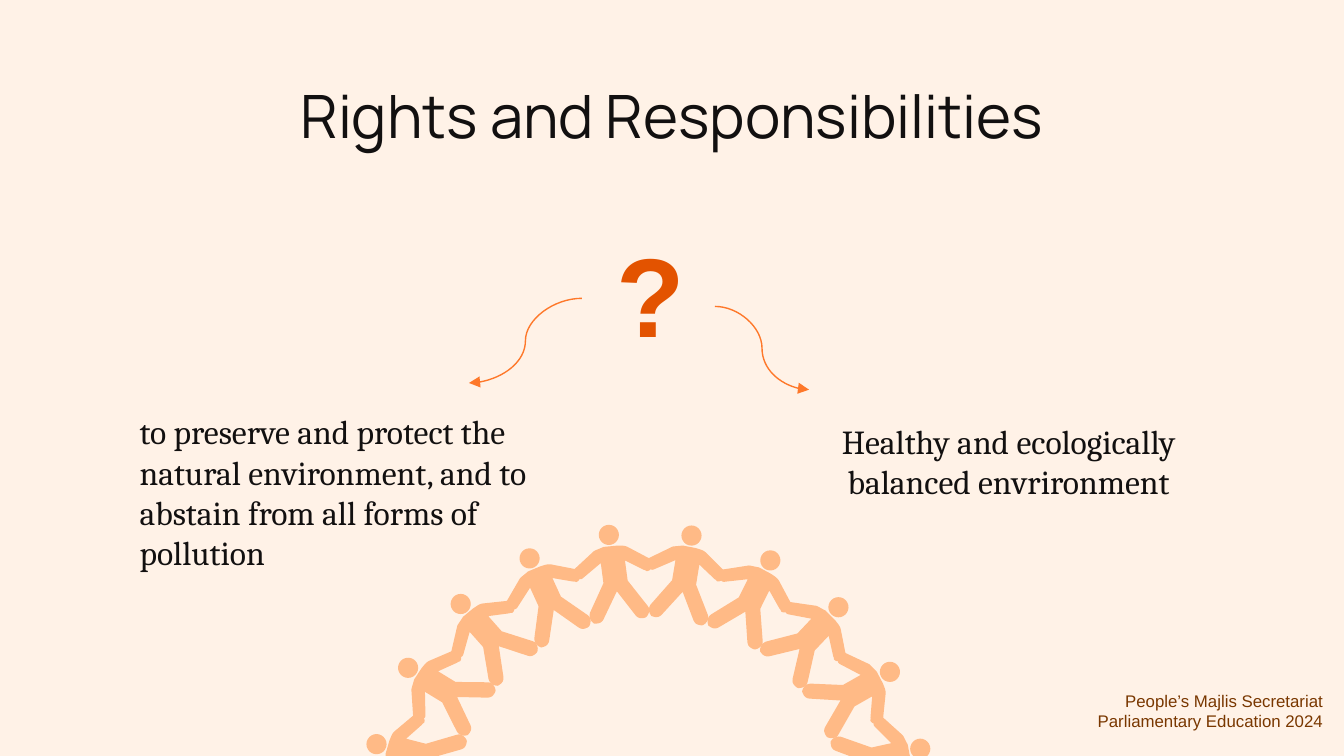
from math import cos, radians, sin

from lxml.etree import SubElement
from pptx import Presentation
from pptx.dml.color import RGBColor as Rgb
from pptx.enum.shapes import MSO_CONNECTOR as Link, MSO_SHAPE as Kind
from pptx.enum.text import MSO_ANCHOR as Anchor, PP_ALIGN as Align
from pptx.oxml.ns import qn
from pptx.util import Inches, Pt

HUES = {"paper": "FFF2E7", "ink": "121010", "brown": "793700",
        "mark": "E35300", "arrow": "FE782A", "people": "FFBA86"}
WIDTH = 10
HEIGHT = WIDTH * 9 / 16
HUB = (4.82, 6.04)
STEP = 17
COUNT = 10
BASE = 4
HEAD = (4.53, 3.98)
SIZE = 0.15
BODY = [
    (4.61, 4.06), (4.6, 4.06, 4.6, 4.06, 4.59, 4.06), (4.49, 4.07),
    (4.47, 4.08, 4.44, 4.09, 4.42, 4.1), (4.28, 4.23),
    (4.26, 4.24, 4.26, 4.27, 4.28, 4.29),
    (4.29, 4.3, 4.3, 4.31, 4.32, 4.31),
    (4.33, 4.31, 4.34, 4.3, 4.34, 4.3),
    (4.47, 4.19), (4.49, 4.34), (4.39, 4.56),
    (4.38, 4.59, 4.39, 4.62, 4.42, 4.64),
    (4.43, 4.64, 4.43, 4.64, 4.44, 4.64),
    (4.46, 4.64, 4.48, 4.63, 4.49, 4.61),
    (4.59, 4.4), (4.73, 4.58),
    (4.74, 4.59, 4.75, 4.6, 4.77, 4.6),
    (4.78, 4.6, 4.8, 4.6, 4.81, 4.59),
    (4.83, 4.57, 4.84, 4.53, 4.82, 4.51),
    (4.67, 4.32), (4.65, 4.17), (4.79, 4.24),
    (4.8, 4.24, 4.81, 4.25, 4.81, 4.25),
    (4.83, 4.25, 4.84, 4.24, 4.85, 4.22), (4.86, 4.21),
    (4.87, 4.19, 4.86, 4.17, 4.84, 4.16), (4.67, 4.07),
    (4.65, 4.06, 4.63, 4.06, 4.61, 4.06),
]


def trace(path, steps=5):
    """Turn lines and cubic curves into a list of points."""
    dots = []
    for seg in path:
        if len(seg) == 2:
            dots.append(seg)
            continue
        ends = [dots[-1], seg[:2], seg[2:4], seg[4:]]
        for n in range(1, steps + 1):
            t = n / steps
            mix = ((1 - t) ** 3, 3 * t * (1 - t) ** 2, 3 * t * t * (1 - t), t ** 3)
            dots.append(tuple(sum(m * p[k] for m, p in zip(mix, ends)) for k in (0, 1)))
    return dots


def turn(dot, angle):
    """Rotate a point about the hub by an angle in degrees."""
    x, y = dot[0] - HUB[0], dot[1] - HUB[1]
    c, s = cos(radians(angle)), sin(radians(angle))
    return HUB[0] + x * c - y * s, HUB[1] + x * s + y * c


class Deck:
    """Hold the style and the current slide."""

    def __init__(self, width, height):
        """Open a deck with one plain slide."""
        self.prs = Presentation()
        self.prs.slide_width, self.prs.slide_height = Inches(width), Inches(height)
        self.slide = self.prs.slides.add_slide(self.prs.slide_layouts[6])
        self.paint(self.slide.background.fill, "paper")

    def paint(self, fill, hue):
        """Give a fill one solid colour."""
        fill.solid()
        fill.fore_color.rgb = Rgb.from_string(HUES[hue])

    def text(self, box, lines, font, size, hue="ink", align=Align.LEFT, pad=0.1, bold=False):
        """Add a text box with one paragraph for each line."""
        frame = self.slide.shapes.add_textbox(*map(Inches, box)).text_frame
        form = {"word_wrap": True, "vertical_anchor": Anchor.TOP,
                "margin_left": Inches(0.1), "margin_right": Inches(0.1),
                "margin_top": Inches(pad), "margin_bottom": Inches(pad)}
        for key, val in form.items():
            setattr(frame, key, val)
        frame.text = "\n".join(lines)
        for para in frame.paragraphs:
            para.alignment = align
            face = para.runs[0].font
            for key, val in {"name": font, "size": Pt(size), "bold": bold}.items():
                setattr(face, key, val)
            face.color.rgb = Rgb.from_string(HUES[hue])

    def arrow(self, start, end):
        """Add a curved arrow."""
        line = self.slide.shapes.add_connector(Link.CURVE, *map(Inches, start + end))
        line.line.width = Pt(0.75)
        self.paint(line.line.fill, "arrow")
        SubElement(line.line._get_or_add_ln(), qn("a:tailEnd"), type="triangle")
        SubElement(line._element.spPr, qn("a:effectLst"))

    def finish(self, shape):
        """Make a shape flat in the people colour."""
        shape.shadow.inherit = False
        self.paint(shape.fill, "people")
        shape.line.fill.background()

    def person(self, group, angle):
        """Add a head and a body turned about the hub."""
        x, y = turn(HEAD, angle)
        box = (x - SIZE / 2, y - SIZE / 2, SIZE, SIZE)
        self.finish(group.shapes.add_shape(Kind.OVAL, *map(Inches, box)))
        dots = [tuple(map(Inches, turn(dot, angle))) for dot in trace(BODY)]
        pen = group.shapes.build_freeform(*dots[0])
        pen.add_line_segments(dots[1:], close=True)
        self.finish(pen.convert_to_shape())

    def crowd(self):
        """Add the arch of people."""
        group = self.slide.shapes.add_group_shape()
        for n in range(COUNT):
            self.person(group, STEP * (n - BASE))


def main():
    """Build the slide and save it."""
    deck = Deck(WIDTH, HEIGHT)
    deck.text((6.92, 5.09, 3.02, 0.4),
              ["People’s Majlis Secretariat", "Parliamentary Education 2024"],
              "Arial", 9, "brown", Align.RIGHT, 0.05)
    deck.text((0.94, 2.96, 3.55, 0.63),
              ["to preserve and protect the natural environment, "
               "and to abstain from all forms of pollution"], "Cambria", 18)
    deck.text((5.79, 3.03, 3.43, 0.63),
              ["Healthy and ecologically balanced envrironment"],
              "Cambria", 18, align=Align.CENTER)
    deck.text((4.49, 1.63, 0.72, 1.11), ["?"], "Arial", 60, "mark", pad=0.05, bold=True)
    deck.arrow((4.33, 2.22), (3.49, 2.85))
    deck.arrow((5.32, 2.28), (6.02, 2.9))
    deck.text((0.78, 0.49, 8.44, 0.63), ["Rights and Responsibilities"],
              "Manrope", 32, align=Align.CENTER)
    deck.crowd()
    deck.prs.save("out.pptx")


if __name__ == "__main__":
    main()
